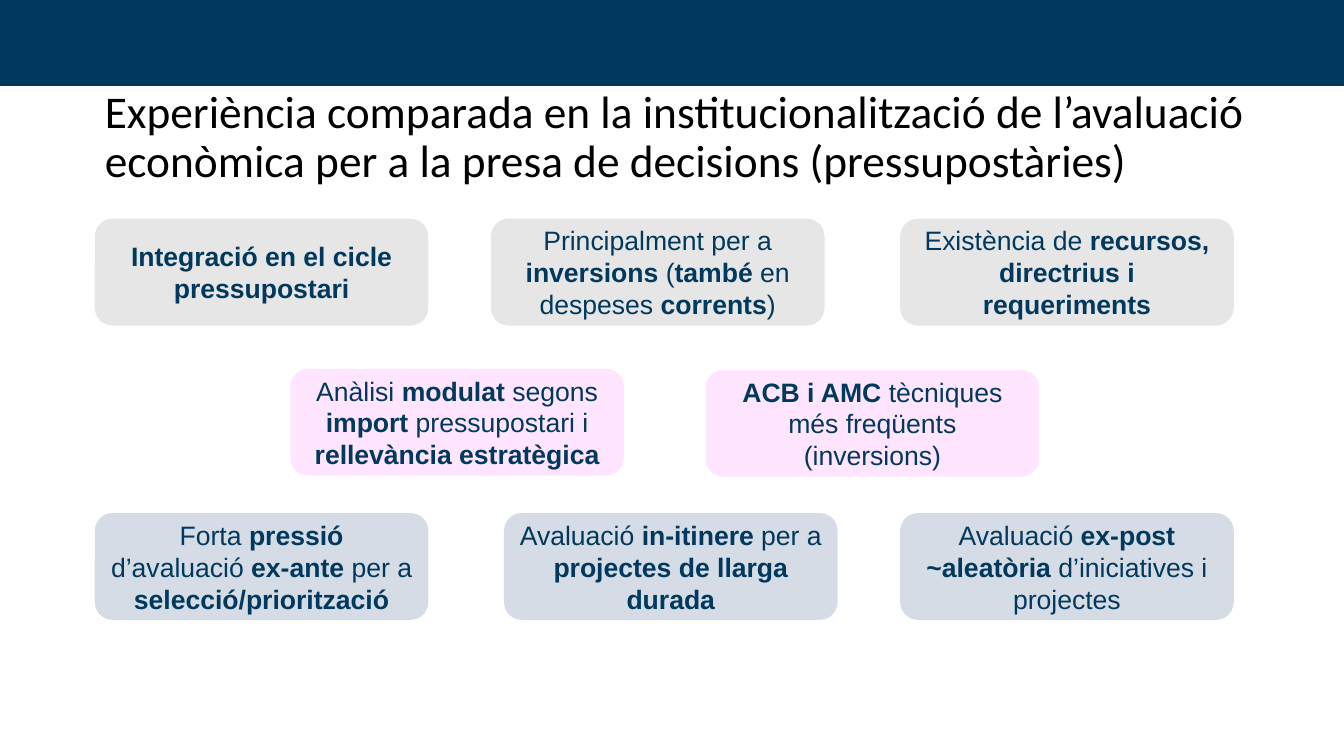
"""Build the slide on comparative experience in economic evaluation."""
from pptx import Presentation
from pptx.dml.color import RGBColor
from pptx.enum.shapes import MSO_SHAPE
from pptx.enum.text import MSO_ANCHOR, MSO_AUTO_SIZE, PP_ALIGN
from pptx.util import Pt

RECT, ROUND = MSO_SHAPE.RECTANGLE, MSO_SHAPE.ROUNDED_RECTANGLE
MID, LEFT, CENTER = MSO_ANCHOR.MIDDLE, PP_ALIGN.LEFT, PP_ALIGN.CENTER
FIXED = MSO_AUTO_SIZE.NONE

TITLE = ("Experiència comparada en la institucionalització de l’avaluació "
         "econòmica per a la presa de decisions (pressupostàries)")
NAVY, BLACK = "00395D", "000000"
BOX_W, BOX_H = 238.32, 76.32
# Asterisks switch bold on and off.
ROWS = [
    ("E7E6E6", [
        (67.68, 156.24, "*Integració en el cicle pressupostari*"),
        (350.64, 156.24, "Principalment per a *inversions* (*també* en "
                         "despeses *corrents*)"),
        (642.96, 156.24, "Existència de *recursos, directrius i requeriments*"),
    ]),
    ("FFE5FF", [
        (207.36, 263.52, "Anàlisi *modulat* segons *import* pressupostari i "
                         "*rellevància estratègica*"),
        (504, 264.24, "*ACB i AMC* tècniques més freqüents (inversions)"),
    ]),
    ("D6DCE5", [
        (67.68, 366.48, "Forta *pressió* d’avaluació *ex-ante* per a "
                        "*selecció/priorització*"),
        (360, 366.48, "Avaluació *in-itinere* per a "
                      "*projectes de llarga durada*"),
        (642.96, 366.48, "Avaluació *ex-post ~aleatòria* d’iniciatives "
                         "i projectes"),
    ]),
]
TITLE_FONT = {"name": "Calibri", "size": Pt(32.4)}
BOX_FONT = {"name": "Arial", "size": Pt(19)}
FRAME = {"word_wrap": True, "auto_size": FIXED, "vertical_anchor": MID}


def paint(color, tint):
    color.rgb = RGBColor.from_string(tint)


def apply(item, look):
    for key, value in look.items():
        setattr(item, key, value)


def place(shape, left, top, width, height):
    apply(shape, {"left": Pt(left), "top": Pt(top),
                  "width": Pt(width), "height": Pt(height)})


def write(shape, text, look, tint, align):
    frame = shape.text_frame
    apply(frame, FRAME)
    para = frame.paragraphs[0]
    para.alignment = align
    for num, part in enumerate(text.split("*")):
        if part:
            run = para.add_run()
            run.text = part
            apply(run.font, {**look, "bold": num % 2 == 1})
            paint(run.font.color, tint)
    return para


def block(slide, kind, area, tint):
    shape = slide.shapes.add_shape(kind, *map(Pt, area))
    shape.shadow.inherit = False
    shape.fill.solid()
    paint(shape.fill.fore_color, tint)
    shape.line.fill.background()
    return shape


def main():
    deck = Presentation()
    deck.slide_width, deck.slide_height = Pt(960), Pt(540)
    slide = deck.slides.add_slide(deck.slide_layouts[5])

    band = block(slide, RECT, (0, 0, 960, 61.2), NAVY)
    band.line.width = Pt(1)
    band.line.fill.solid()
    paint(band.line.color, NAVY)

    title = slide.shapes.title
    band._element.addnext(title._element)
    place(title, 67.68, 60.48, 884.88, 76.32)
    write(title, TITLE, TITLE_FONT, BLACK, LEFT).line_spacing = 0.9

    for tint, boxes in ROWS:
        for left, top, text in boxes:
            box = block(slide, ROUND, (left, top, BOX_W, BOX_H), tint)
            write(box, text, BOX_FONT, NAVY, CENTER)

    deck.save("out.pptx")


if __name__ == "__main__":
    main()
